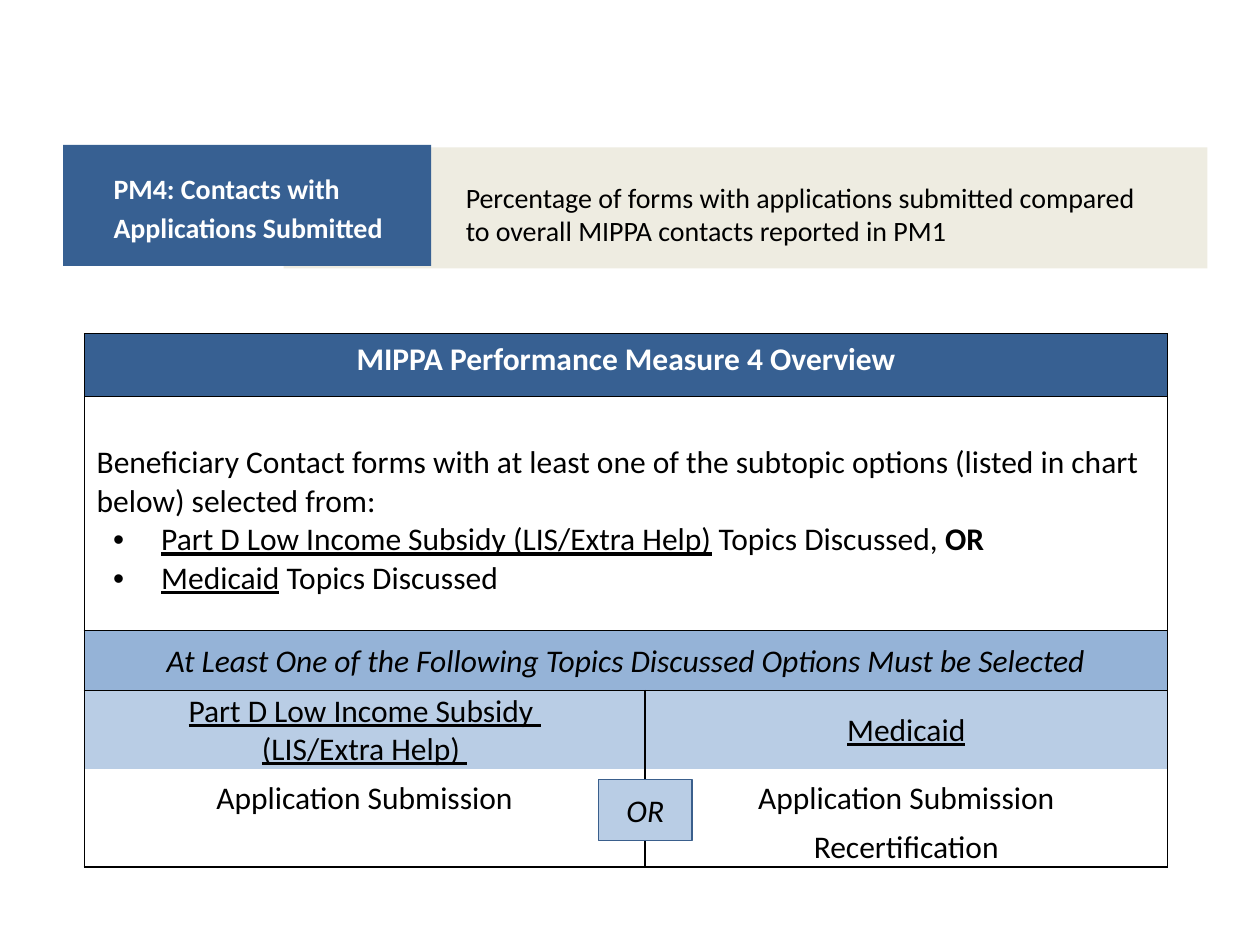
from dataclasses import dataclass

from lxml import etree
from pptx import Presentation
from pptx import util as u
from pptx.dml.color import RGBColor
from pptx.enum import shapes, text
from pptx.oxml import ns

FONT = "Calibri"
WHITE = RGBColor(0xFF, 0xFF, 0xFF)
BLACK = RGBColor(0x00, 0x00, 0x00)
NAVY = RGBColor(0x37, 0x60, 0x92)
OUTLINE = RGBColor(0x3A, 0x5F, 0x8C)
MID_BLUE = RGBColor(0x95, 0xB3, 0xD7)
PALE_BLUE = RGBColor(0xB9, 0xCD, 0xE5)
SAND = RGBColor(0xEE, 0xEC, 0xE1)

NO_STYLE = "{2D5ABB26-0587-4C30-8999-92F81FD0307C}"
TABLE_LEFT = 1.7
CENTER = text.PP_ALIGN.CENTER
LEFT = text.PP_ALIGN.LEFT
TOP = text.MSO_ANCHOR.TOP
MIDDLE = text.MSO_ANCHOR.MIDDLE
BOTTOM = text.MSO_ANCHOR.BOTTOM
OVERVIEW_INSETS = (0.25, 0.13, 0.25, 0.13)
OPTION_INSETS = (0.03, 0.03, 0.03, 0)


@dataclass
class Span:
    words: str
    bold: bool = False
    italic: bool = False
    underline: bool = False


@dataclass
class Line:
    spans: list[Span]
    align: text.PP_ALIGN = CENTER
    bullet: bool = False


@dataclass
class CellContent:
    lines: list[Line]
    fill: RGBColor | None = None
    color: RGBColor = BLACK
    anchor: text.MSO_ANCHOR = MIDDLE
    insets: tuple = OPTION_INSETS
    borders: str = "LRTB"
    border_width: float = 1


def option(*words: str, underline: bool = False, **settings) -> CellContent:
    lines = [Line([Span(word, underline=underline)]) for word in words]
    return CellContent(lines, **settings)


def set_box(shape, left: float, top: float, width: float, height: float) -> None:
    shape.left, shape.top = u.Cm(left), u.Cm(top)
    shape.width, shape.height = u.Cm(width), u.Cm(height)


def set_insets(target, insets: tuple) -> None:
    sides = ("left", "top", "right", "bottom")
    for side, inset in zip(sides, insets):
        setattr(target, f"margin_{side}", u.Cm(inset))


def format_font(font, size: float, color: RGBColor, bold=False, italic=False) -> None:
    font.name, font.size = FONT, u.Pt(size)
    font.bold, font.italic = bold, italic
    font.color.rgb = color


def add_bullet(paragraph) -> None:
    properties = paragraph._p.get_or_add_pPr()
    properties.set("marL", str(u.Cm(1.3)))
    properties.set("indent", str(u.Cm(-0.97)))
    etree.SubElement(properties, ns.qn("a:buFont"), typeface="Arial")
    etree.SubElement(properties, ns.qn("a:buChar"), char="•")


def write_lines(text_frame, lines: list[Line], size: float, color: RGBColor) -> None:
    text_frame.text = "\n".join("" for _ in lines)
    for paragraph, line in zip(text_frame.paragraphs, lines):
        paragraph.alignment = line.align
        if line.bullet:
            add_bullet(paragraph)
        for span in line.spans:
            run = paragraph.add_run()
            run.text = span.words
            format_font(run.font, size, color, span.bold, span.italic)
            run.font.underline = span.underline


def add_borders(cell, sides: str, width: float) -> None:
    properties = cell._tc.get_or_add_tcPr()
    for side in "LRTB":
        border = etree.SubElement(properties, ns.qn(f"a:ln{side}"), w=str(u.Pt(width)))
        if side in sides:
            fill = etree.SubElement(border, ns.qn("a:solidFill"))
            etree.SubElement(fill, ns.qn("a:srgbClr"), val=str(BLACK))
        else:
            etree.SubElement(border, ns.qn("a:noFill"))


def fill_cell(cell, content: CellContent) -> None:
    add_borders(cell, content.borders, content.border_width)
    if content.fill is None:
        cell.fill.background()
    else:
        cell.fill.solid()
        cell.fill.fore_color.rgb = content.fill
    cell.vertical_anchor = content.anchor
    set_insets(cell, content.insets)
    if content.lines:
        write_lines(cell.text_frame, content.lines, 18, content.color)


def add_grid(slide, top: float, columns: list[float], heights: list[float],
             rows: list[list[CellContent]]):
    frame = slide.shapes.add_table(
        len(heights), len(columns), u.Cm(TABLE_LEFT), u.Cm(top),
        u.Cm(sum(columns)), u.Cm(sum(heights)))
    table = frame.table
    table.first_row = table.horz_banding = False
    table._tbl.tblPr.find(ns.qn("a:tableStyleId")).text = NO_STYLE
    for column, width in zip(table.columns, columns):
        column.width = u.Cm(width)
    for row, height, contents in zip(table.rows, heights, rows):
        row.height = u.Cm(height)
        for cell, content in zip(row.cells, contents):
            fill_cell(cell, content)
    return table


def add_rectangle(slide, box: tuple, fill: RGBColor):
    shape = slide.shapes.add_shape(
        shapes.MSO_SHAPE.RECTANGLE, *(u.Cm(length) for length in box))
    shape.shadow.inherit = False
    shape.fill.solid()
    shape.fill.fore_color.rgb = fill
    shape.line.fill.background()
    return shape


def add_overview(slide) -> None:
    heading = CellContent(
        [Line([Span("MIPPA Performance Measure 4 Overview", bold=True)])],
        NAVY, WHITE, TOP, OVERVIEW_INSETS, border_width=0.75)
    details = CellContent(
        [
            Line([Span("Beneficiary Contact forms with at least one of the subtopic "
                       "options (listed in chart below) selected from:")], LEFT),
            Line([Span("Part D Low Income Subsidy (LIS/Extra Help)", underline=True),
                  Span(" Topics Discussed, "), Span("OR", bold=True)], LEFT, True),
            Line([Span("Medicaid", underline=True), Span(" Topics Discussed")],
                 LEFT, True),
        ],
        WHITE, insets=(0.25, 0.4, 0.25, 0.13), border_width=0.75)
    add_grid(slide, 6.73, [21.84], [1.27, 4.72], [[heading], [details]])


def add_options(slide) -> None:
    heading = CellContent(
        [Line([Span("At Least One of the Following Topics Discussed Options "
                    "Must be Selected", italic=True)])], MID_BLUE)
    topic = dict(underline=True, fill=PALE_BLUE, borders="LRT")
    upper = dict(anchor=BOTTOM, borders="LR")
    lower = dict(anchor=BOTTOM, borders="LRB")
    rows = [
        [heading, CellContent([], MID_BLUE)],
        [option("Part D Low Income Subsidy ", "(LIS/Extra Help) ", **topic),
         option("Medicaid", **topic)],
        [option("Application Submission", **upper)] * 2,
        [option(**lower), option("Recertification", **lower)],
    ]
    table = add_grid(slide, 12.71, [11.3, 10.54], [1.21, 1.57, 0.99, 0.99], rows)
    table.cell(0, 0).merge(table.cell(0, 1))


def add_or_box(slide) -> None:
    shape = add_rectangle(slide, (12.07, 15.72, 1.88, 1.22), PALE_BLUE)
    shape.line.color.rgb = OUTLINE
    shape.line.width = u.Pt(0.75)
    shape.text_frame.vertical_anchor = MIDDLE
    write_lines(shape.text_frame, [Line([Span("OR", italic=True)])], 18, BLACK)


def add_measure_title(slide) -> None:
    title = slide.shapes.title
    set_box(title, 1.27, 2.92, 7.42, 2.44)
    geometry = etree.SubElement(title._element.spPr, ns.qn("a:prstGeom"), prst="homePlate")
    etree.SubElement(geometry, ns.qn("a:avLst"))
    title.fill.solid()
    title.fill.fore_color.rgb = NAVY
    frame = title.text_frame
    frame.word_wrap = True
    frame.auto_size = text.MSO_AUTO_SIZE.NONE
    frame.vertical_anchor = MIDDLE
    set_insets(frame, (1.02, 0.13, 0.76, 0.13))
    label = Span("PM4: Contacts with Applications Submitted", bold=True)
    write_lines(frame, [Line([label], LEFT)], 16, WHITE)
    frame.paragraphs[0].line_spacing = 1.14
    slide.shapes._spTree.append(title._element)


def add_description(slide) -> None:
    box = slide.shapes.add_textbox(u.Cm(9.14), u.Cm(3.51), u.Cm(14.38), u.Cm(1.63))
    box.text_frame.word_wrap = True
    box.text_frame.auto_size = text.MSO_AUTO_SIZE.SHAPE_TO_FIT_TEXT
    description = Span("Percentage of forms with applications submitted compared "
                       "to overall MIPPA contacts reported in PM1")
    write_lines(box.text_frame, [Line([description], LEFT)], 16, BLACK)


def main() -> None:
    presentation = Presentation()
    presentation.slide_width, presentation.slide_height = u.Cm(25.4), u.Cm(19.05)
    slide = presentation.slides.add_slide(presentation.slide_layouts[5])
    add_overview(slide)
    add_options(slide)
    add_or_box(slide)
    add_rectangle(slide, (5.72, 2.97, 18.62, 2.44), SAND)
    add_measure_title(slide)
    add_description(slide)
    presentation.save("out.pptx")


if __name__ == "__main__":
    main()
